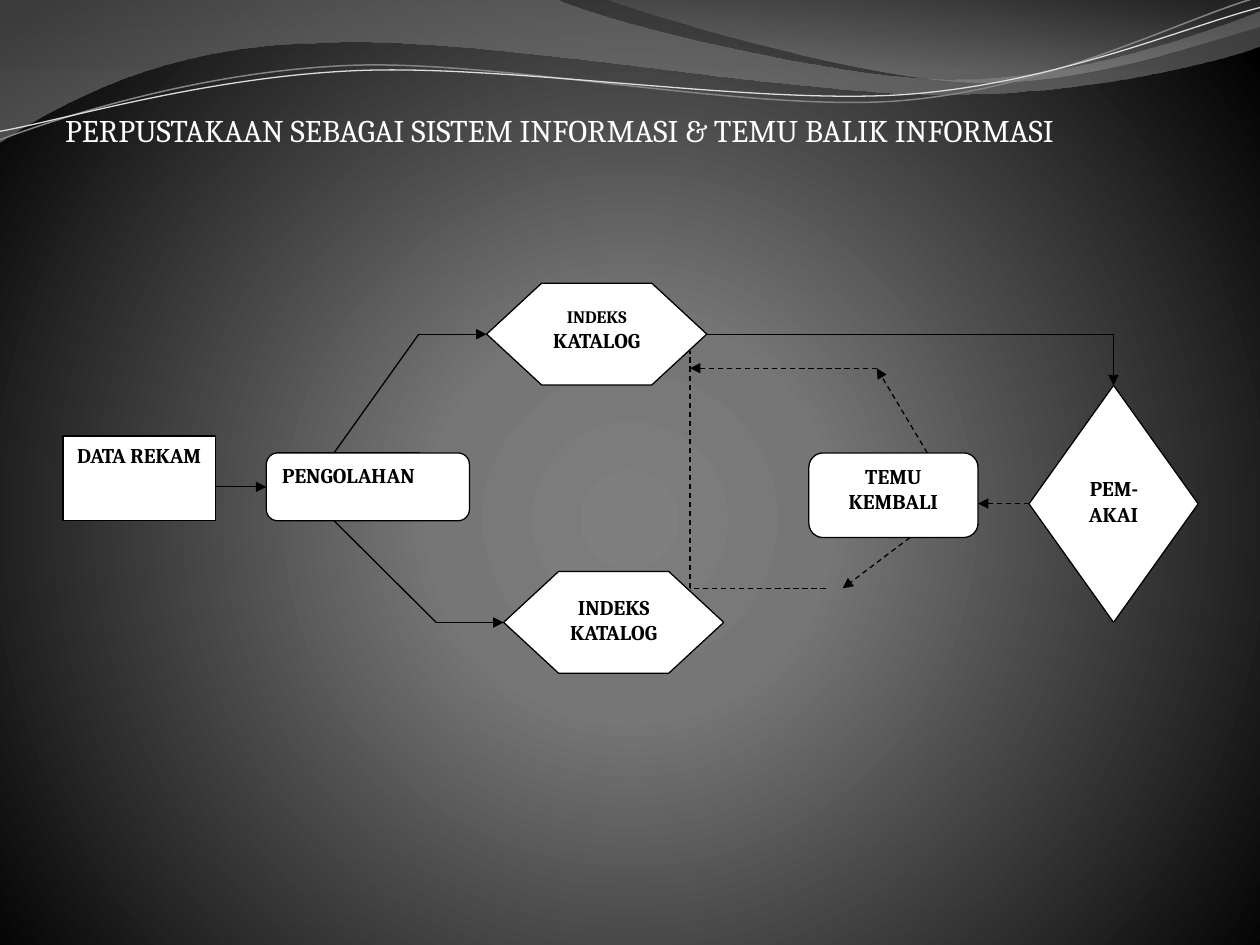
"""Build a slide with the flow of a library as an information and retrieval system."""
from lxml import etree
from pptx import Presentation
from pptx import util as u
from pptx.dml.color import RGBColor
from pptx.enum import dml, shapes, text
from pptx.oxml.ns import qn

Pt = u.Pt
THEME = {
    "font": "Cambria", "ink": "000000", "paper": "FFFFFF", "title": 18, "body": 12, "small": 10, "rule": 0.75,
    "backdrop": [(0, "7F7F7F", 100), (25, "767676", 100), (100, "000000", 100)],
    "wide_wave": [(0, "848484", 45), (100, "888888", 55)],
    "right_wave": [(0, "6F6F6F", 30), (80, "9D9D9D", 45)],
    "back_strand": ("848484", 0.85), "front_strand": ("DDDDDD", 0.75),
}


def put_text(sp, lines, color=THEME["ink"], bold=True, align="CENTER", anchor="TOP", wrap=True, top=3.6):
    """Fill a shape with (text, size) lines, one paragraph each."""
    tf = sp.text_frame
    tf.word_wrap = wrap
    tf.vertical_anchor = getattr(text.MSO_ANCHOR, anchor)
    tf.margin_top = Pt(top)
    for i, (words, size) in enumerate(lines):
        p = tf.add_paragraph() if i else tf.paragraphs[0]
        p.alignment = getattr(text.PP_ALIGN, align)
        r = p.add_run()
        r.text = words
        r.font.name, r.font.size, r.font.bold = THEME["font"], Pt(size), bold
        r.font.color.rgb = RGBColor.from_string(color)


def set_gradient(owner, fill, stops, circle=False):
    """Apply (position, colour, opacity) stops, downwards or from a circle."""
    fill.gradient()
    grad = owner.element.find(".//" + qn("a:gradFill"))
    grad.clear()
    gs_list = etree.SubElement(grad, qn("a:gsLst"))
    for pos, color, opacity in stops:
        gs = etree.SubElement(gs_list, qn("a:gs"), pos=str(pos * 1000))
        rgb = etree.SubElement(gs, qn("a:srgbClr"), val=color)
        if opacity < 100:
            etree.SubElement(rgb, qn("a:alpha"), val=str(opacity * 1000))
    if circle:
        ring = etree.SubElement(grad, qn("a:path"), path="circle")
        etree.SubElement(ring, qn("a:fillToRect"), l="10000", t="110000", r="10000", b="100000")
    else:
        etree.SubElement(grad, qn("a:lin"), ang="5400000", scaled="0")


prs = Presentation()
prs.slide_width, prs.slide_height = Pt(720), Pt(540)
s = prs.slides.add_slide(prs.slide_layouts[6])
set_gradient(s, s.background.fill, THEME["backdrop"], circle=True)

waves = [
    ("wide_wave", (0, -0.7), [
        (316.8, -0.7), (342.7, 12.2, 478.1, 45.4, 545.8, 45.4), (614.2, 45.4, 689.8, 18.7, 720, 6.5),
        (720.7, 25.9), (707.8, 31.7, 626.4, 54.7, 537.1, 54), (447.8, 54, 275, 20.2, 185, 24.5),
        (92.9, 25.2, 33.1, 59.8, -0.7, 81.4), (0, -0.7)]),
    ("right_wave", (344.9, -0.7), [
        (366.5, 7.9, 491, 44.6, 553.7, 46.8), (616.3, 49.7, 691.9, 23, 720, 15.1), (720, 0), (344.9, -0.7)]),
    ("back_strand", (-1.4, 62.9), [
        (33.8, 51.7, 114.1, 29.4, 199.8, 29.9), (284.8, 30.3, 425.8, 67.3, 512.4, 64.9),
        (599.1, 62.4, 676.5, 25.7, 720.2, 15.5)]),
    ("front_strand", (-1.1, 58), [
        (32.9, 53.8, 118.3, 32.5, 204.1, 33), (290.6, 33.4, 428.9, 63.1, 515.5, 61.4),
        (601.3, 59.6, 678.4, 30.1, 721.4, 21.3)]),
]
for name, start, segments in waves:
    filled = name.endswith("wave")
    pen = s.shapes.build_freeform(*map(Pt, start), scale=1.0)
    for seg in segments:
        pen.add_line_segments([(Pt(x), Pt(y)) for x, y in zip(seg[::2], seg[1::2])], close=False)
    sp = pen.convert_to_shape()
    sp.shadow.inherit = False
    steps = iter(sp.element.findall(".//" + qn("a:lnTo")))
    for seg in segments:
        group = [next(steps) for _ in seg[::2]]
        if len(group) == 3:
            curve = etree.Element(qn("a:cubicBezTo"))
            group[0].addprevious(curve)
            for step in group:
                curve.append(step[0])
                step.getparent().remove(step)
    if filled:
        etree.SubElement(sp.element.find(".//" + qn("a:pathLst"))[0], qn("a:close"))
        set_gradient(sp, sp.fill, THEME[name])
        sp.line.fill.background()
    else:
        color, width = THEME[name]
        sp.rotation = 357.3
        sp.fill.background()
        sp.line.color.rgb = RGBColor.from_string(color)
        sp.line.width = Pt(width)

body, small = THEME["body"], THEME["small"]
boxes = [
    ("RECTANGLE", None, (36, 249.1, 87.1, 48.2), [("DATA REKAM", body)], {}),
    ("ROUNDED_RECTANGLE", 0.17, (152.2, 258.8, 116.1, 38.8), [("PENGOLAHAN", body)], {"align": "LEFT"}),
    ("HEXAGON", 0.54, (278.1, 161.9, 125.8, 58.1), [("INDEKS", small), ("KATALOG", body)], {}),
    ("DIAMOND", None, (588, 220.2, 96.7, 135.5), [("PEM-AKAI", body)], {"top": 17.9}),
    ("HEXAGON", 0.54, (287.8, 326.6, 125.8, 58.1), [("INDEKS", body), ("KATALOG", body)], {}),
    ("ROUNDED_RECTANGLE", 0.17, (462.2, 258.8, 96.7, 48.4), [("TEMU KEMBALI", body)], {}),
]
for kind, adjust, place, lines, fmt in boxes:
    sp = s.shapes.add_shape(getattr(shapes.MSO_SHAPE, kind), *map(Pt, place))
    sp.shadow.inherit = False
    if adjust:
        sp.adjustments[0] = adjust
    sp.fill.solid()
    sp.fill.fore_color.rgb = RGBColor.from_string(THEME["paper"])
    sp.line.color.rgb = RGBColor.from_string(THEME["ink"])
    sp.line.width = Pt(THEME["rule"])
    put_text(sp, lines, **fmt)

links = [
    ((123.1, 278.2, 152.2, 278.2), False, True),
    ((190.9, 297.6, 249.3, 355.7), False, False),
    ((239.3, 191, 190.9, 258.8), False, False),
    ((249.3, 355.7, 287.8, 355.7), False, True),
    ((239.3, 191, 278.1, 191), False, True),
    ((403.9, 191, 636.3, 191), False, False),
    ((636.3, 191, 636.3, 220.2), False, True),
    ((588, 287.8, 558.9, 287.8), True, True),
    ((529.9, 258.8, 501, 210.4), True, True),
    ((394.3, 336.2, 394.3, 200.7), True, False),
    ((501, 210.4, 394.3, 210.4), True, True),
    ((471.8, 336.2, 394.3, 336.2), True, False),
    ((520, 307.2, 481.5, 336.2), True, True),
]
for ends, dashed, arrow in links:
    cx = s.shapes.add_connector(shapes.MSO_CONNECTOR.STRAIGHT, *map(Pt, ends))
    cx.line.color.rgb = RGBColor.from_string(THEME["ink"])
    cx.line.width = Pt(THEME["rule"])
    if dashed:
        cx.line.dash_style = dml.MSO_LINE.DASH
    sp_pr = cx.element.spPr
    if arrow:
        etree.SubElement(sp_pr.find(qn("a:ln")), qn("a:tailEnd"), type="triangle")
    etree.SubElement(sp_pr, qn("a:effectLst"))

title = s.shapes.add_textbox(Pt(30.2), Pt(59.8), Pt(660.2), Pt(28.8))
put_text(title, [("PERPUSTAKAAN SEBAGAI SISTEM INFORMASI & TEMU BALIK INFORMASI", THEME["title"])],
         color=THEME["paper"], bold=False, align="LEFT", anchor="MIDDLE", wrap=False)
title.text_frame.auto_size = text.MSO_AUTO_SIZE.SHAPE_TO_FIT_TEXT

prs.save("out.pptx")
